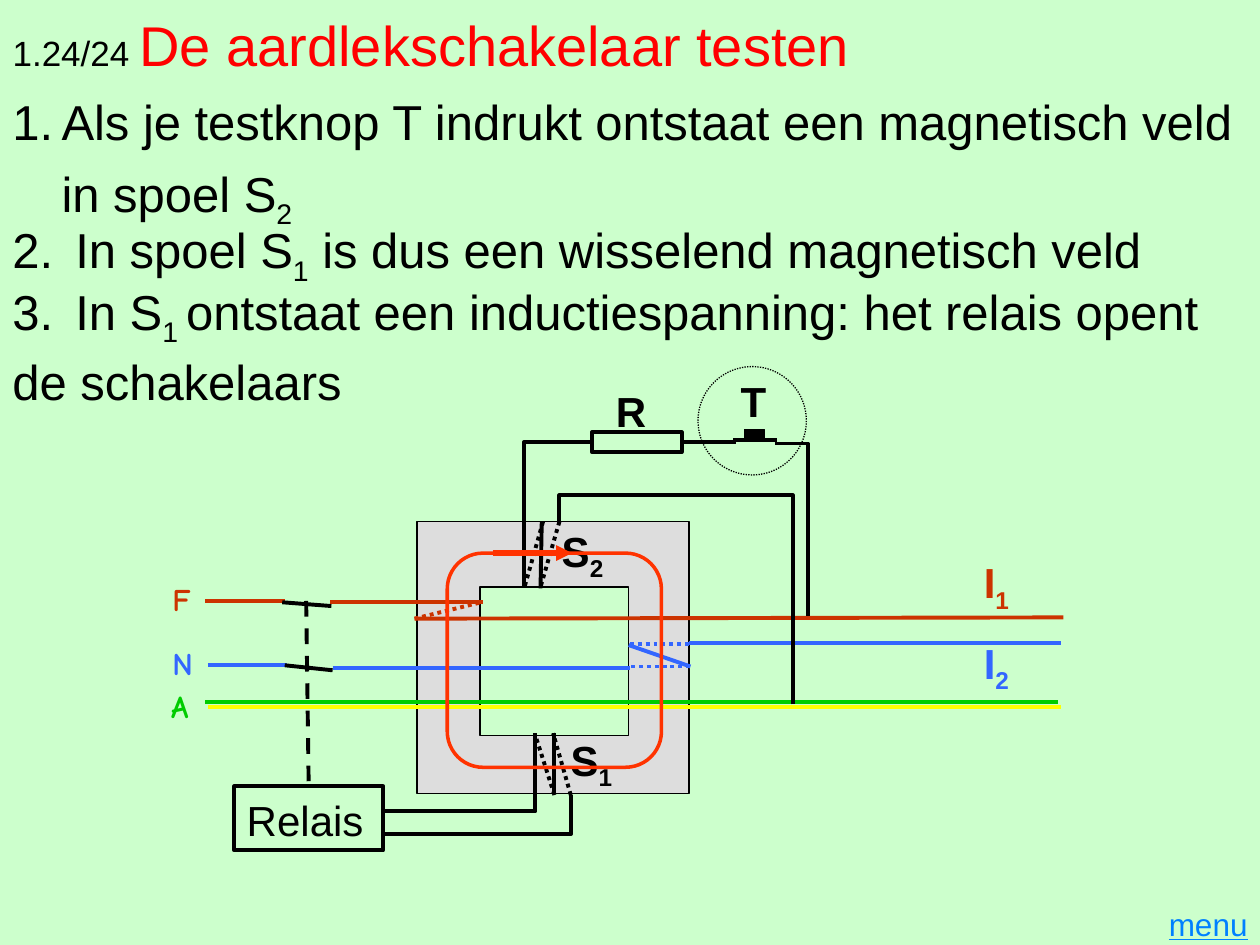
from dataclasses import dataclass
from typing import NamedTuple, Optional

from lxml import etree
from pptx import Presentation
from pptx import util as u
from pptx.dml.color import RGBColor
from pptx.enum import dml, shapes, text
from pptx.oxml import ns


@dataclass(frozen=True)
class Theme:
    background: str = "CCFFCC"
    core: str = "DDDDDD"
    ink: str = "000000"
    title: str = "FF0000"
    phase: str = "CC3300"
    neutral: str = "3366FF"
    earth: str = "00CC00"
    earth_stripe: str = "FFFF00"
    flux: str = "FF3300"
    menu: str = "0080FF"
    font: str = "Arial"
    wire_font: str = "Comic Neue"
    title_size: int = 32
    body_size: int = 28
    label_size: int = 24
    number_size: int = 20
    small_size: int = 18
    wire: float = 2.25
    thin: float = 0.75


THEME = Theme()
DOT = dml.MSO_LINE.ROUND_DOT
DASH = dml.MSO_LINE.DASH


class Box(NamedTuple):
    left: float
    top: float
    width: float
    height: float


class Run(NamedTuple):
    text: str
    size: int = THEME.body_size
    color: str = THEME.ink
    bold: bool = False
    subscript: bool = False
    font: str = THEME.font
    underline: bool = False


class Wire(NamedTuple):
    points: tuple
    color: str = THEME.ink
    dash: Optional[dml.MSO_LINE] = None
    width: float = THEME.wire


class Line(NamedTuple):
    runs: tuple
    margin: float = 0
    indent: float = 0


def length(inches: float) -> u.Length:
    """The drawing grid is in inches."""
    return u.Cm(2.54 * inches)


def style_line(line, color: str, width: float, dash=None) -> None:
    line.color.rgb = RGBColor.from_string(color)
    line.width = u.Pt(width)
    if dash is not None:
        line.dash_style = dash


def add_outline(slide, kind, box: Box, color: str, width: float, fill=None, dash=None):
    shape = slide.shapes.add_shape(kind, *map(length, box))
    shape.shadow.inherit = False
    if fill:
        shape.fill.solid()
        shape.fill.fore_color.rgb = RGBColor.from_string(fill)
    else:
        shape.fill.background()
    style_line(shape.line, color, width, dash)
    return shape


def add_wire(slide, wire: Wire):
    """Two points give a connector, more points give a bent open outline."""
    points = [(length(x), length(y)) for x, y in wire.points]
    if len(points) == 2:
        shape = slide.shapes.add_connector(shapes.MSO_CONNECTOR.STRAIGHT, *points[0], *points[1])
        etree.SubElement(shape._element.spPr, ns.qn("a:effectLst"))
    else:
        builder = slide.shapes.build_freeform(*points[0])
        builder.add_line_segments(points[1:], close=False)
        shape = builder.convert_to_shape()
        shape.shadow.inherit = False
        shape.fill.background()
    style_line(shape.line, wire.color, wire.width, wire.dash)
    return shape


def add_run(paragraph, run: Run) -> None:
    part = paragraph.add_run()
    part.text = run.text
    font = part.font
    font.name, font.size, font.bold = run.font, u.Pt(run.size), run.bold
    font.color.rgb = RGBColor.from_string(run.color)
    if run.underline:
        font.underline = True
    if run.subscript:
        part._r.get_or_add_rPr().set("baseline", "-25000")


def write(shape, lines, anchor=text.MSO_ANCHOR.TOP, align=text.PP_ALIGN.LEFT, spacing=1.0) -> None:
    frame = shape.text_frame
    frame.word_wrap = True
    frame.vertical_anchor = anchor
    for index, line in enumerate(lines):
        paragraph = frame.add_paragraph() if index else frame.paragraphs[0]
        paragraph.alignment = align
        paragraph.line_spacing = spacing
        paragraph.space_before = u.Pt(0.2 * THEME.body_size if index else 0)
        properties = paragraph._p.get_or_add_pPr()
        properties.set("marL", str(length(line.margin)))
        properties.set("indent", str(length(line.indent)))
        if any("\t" in run.text for run in line.runs):
            tabs = etree.SubElement(properties, ns.qn("a:tabLst"))
            etree.SubElement(tabs, ns.qn("a:tab"), pos=str(length(0.39)), algn="l")
        for run in line.runs:
            add_run(paragraph, run)


def add_text(slide, box: Box, *lines: Line, **layout):
    shape = slide.shapes.add_textbox(*map(length, box))
    write(shape, lines, **layout)
    return shape


def add_label(slide, left: float, top: float, letter: str, index="", color=THEME.ink) -> None:
    runs = [Run(letter, THEME.label_size, color, True)]
    if index:
        runs.append(Run(index, THEME.label_size, color, True, True))
    box = Box(left, top, 0.55, 0.79 if index else 0.68)
    shape = add_text(slide, box, Line(tuple(runs)), anchor=text.MSO_ANCHOR.MIDDLE, spacing=1.05)
    shape.text_frame.margin_right = 0


def add_explanation(slide) -> None:
    sub_one = Run("1", subscript=True)
    add_text(slide, Box(0, 0.65, 10, 1.05),
             Line((Run("1.\tAls je testknop T indrukt ontstaat een magnetisch veld"),), 0.39, -0.39),
             Line((Run("in spoel S"), Run("2", subscript=True)), 0.39), spacing=1.05)
    add_text(slide, Box(0, 1.67, 10, 0.58),
             Line((Run("2.\tIn spoel S"), sub_one,
                   Run(" is dus een wisselend magnetisch veld"))), spacing=1.05)
    add_text(slide, Box(0, 2.16, 10.04, 1.09),
             Line((Run("3.\tIn S"), Run("1 ", subscript=True),
                   Run("ontstaat een inductiespanning: het relais opent de schakelaars"))),
             spacing=1.05)


def add_circuit(slide) -> None:
    rectangle = shapes.MSO_SHAPE.RECTANGLE
    ink, phase, neutral = THEME.ink, THEME.phase, THEME.neutral
    add_outline(slide, rectangle, Box(3.31, 4.14, 2.16, 2.16), ink, THEME.thin, THEME.core)
    add_outline(slide, rectangle, Box(3.81, 4.66, 1.18, 1.18), ink, THEME.thin, THEME.background)
    relay = add_outline(slide, rectangle, Box(1.86, 6.24, 1.18, 0.51), ink, THEME.wire)
    write(relay, [Line((Run("Relais", THEME.label_size),))], spacing=1.05)
    resistor = add_outline(slide, rectangle, Box(4.7, 3.43, 0.71, 0.16), ink, THEME.wire)

    add_wire(slide, Wire(((2.43, 4.77), (2.45, 6.24)), dash=DASH)).end_connect(relay, 0)
    add_wire(slide, Wire(((5.41, 3.51), (5.84, 3.51)))).begin_connect(resistor, 3)
    coil_s1 = [
        Wire(((3.05, 6.44), (4.25, 6.44), (4.25, 5.82))),
        Wire(((4.4, 6.31), (4.25, 5.84)), dash=DOT),
        Wire(((3.05, 6.62), (4.53, 6.62), (4.53, 6.31))),
        Wire(((4.53, 6.31), (4.39, 5.82)), dash=DOT),
        Wire(((4.4, 5.82), (4.4, 6.3))),
    ]
    mains = [
        Wire(((1.63, 5.57), (8.4, 5.57)), THEME.earth),
        Wire(((3.29, 4.91), (8.44, 4.9)), phase),
        Wire(((2.62, 4.78), (3.83, 4.78)), phase),
        Wire(((3.29, 4.91), (3.82, 4.78)), phase, DOT),
        Wire(((1.63, 4.77), (2.26, 4.77)), phase),
        Wire(((2.24, 4.78), (2.63, 4.81))),
        Wire(((5.47, 5.1), (8.42, 5.1)), neutral),
        Wire(((2.64, 5.3), (5, 5.3)), neutral),
        Wire(((5, 5.11), (5.47, 5.11)), neutral, DOT),
        Wire(((1.65, 5.28), (2.28, 5.28)), neutral),
        Wire(((2.26, 5.28), (2.64, 5.32))),
        Wire(((5.01, 5.29), (5.49, 5.29)), neutral, DOT),
        Wire(((4.99, 5.12), (5.48, 5.29)), neutral),
        Wire(((1.65, 5.61), (8.42, 5.61)), THEME.earth_stripe),
    ]
    coil_s2 = [
        Wire(((6.29, 5.59), (6.29, 3.93), (4.44, 3.93), (4.44, 4.14))),
        Wire(((6.15, 3.52), (6.41, 3.52), (6.41, 4.89))),
        Wire(((4.7, 3.51), (4.16, 3.51), (4.16, 4.67))),
        Wire(((4.31, 4.14), (4.16, 4.67)), dash=DOT),
        Wire(((4.44, 4.14), (4.29, 4.66)), dash=DOT),
        Wire(((4.3, 4.14), (4.29, 4.67))),
    ]
    test_contact = [Wire(((5.82, 3.49), (6.17, 3.49)))]
    for wire in coil_s1 + mains + coil_s2 + test_contact:
        add_wire(slide, wire)
    add_outline(slide, rectangle, Box(5.91, 3.41, 0.16, 0.08), ink, THEME.thin, ink)

    for letter, left, top, color in (("F", 1.27, 4.55, phase), ("N", 1.27, 5.06, neutral),
                                     ("A", 1.26, 5.4, THEME.earth)):
        run = Run(letter, THEME.small_size, color, True, font=THEME.wire_font)
        add_text(slide, Box(left, top, 0.79, 0.39), Line((run,)))
    for label in ((7.71, 4.24, "I", "1", phase), (7.71, 4.88, "I", "2", neutral),
                  (4.43, 5.65, "S", "1"), (4.36, 3.99, "S", "2"),
                  (5.78, 2.83, "T"), (4.79, 2.91, "R")):
        add_label(slide, *label)

    add_outline(slide, shapes.MSO_SHAPE.OVAL, Box(5.54, 2.91, 0.86, 0.86), ink, THEME.thin, dash=DOT)
    flux = add_outline(slide, shapes.MSO_SHAPE.ROUNDED_RECTANGLE, Box(3.55, 4.39, 1.7, 1.7),
                       THEME.flux, 2)
    flux.adjustments[0] = 0.167
    arrow = add_wire(slide, Wire(((3.91, 4.39), (4.54, 4.39)), THEME.flux, width=3))
    etree.SubElement(arrow.line._get_or_add_ln(), ns.qn("a:tailEnd"), type="triangle")


def main() -> None:
    presentation = Presentation()
    presentation.slide_width, presentation.slide_height = length(10), length(7.5)
    slide = presentation.slides.add_slide(presentation.slide_layouts[5])
    slide.background.fill.solid()
    slide.background.fill.fore_color.rgb = RGBColor.from_string(THEME.background)

    title = slide.shapes.title
    title.left, title.top, title.width, title.height = map(length, Box(0, 0, 10, 0.68))
    write(title, [Line((Run("1.24/24 ", THEME.number_size),
                        Run("De aardlekschakelaar testen", THEME.title_size, THEME.title)))],
          anchor=text.MSO_ANCHOR.MIDDLE, spacing=1.05)
    add_explanation(slide)
    add_circuit(slide)
    add_text(slide, Box(9.17, 7.13, 0.83, 0.4),
             Line((Run("menu", THEME.small_size, THEME.menu, underline=True),)),
             align=text.PP_ALIGN.RIGHT)
    presentation.save("out.pptx")


if __name__ == "__main__":
    main()
